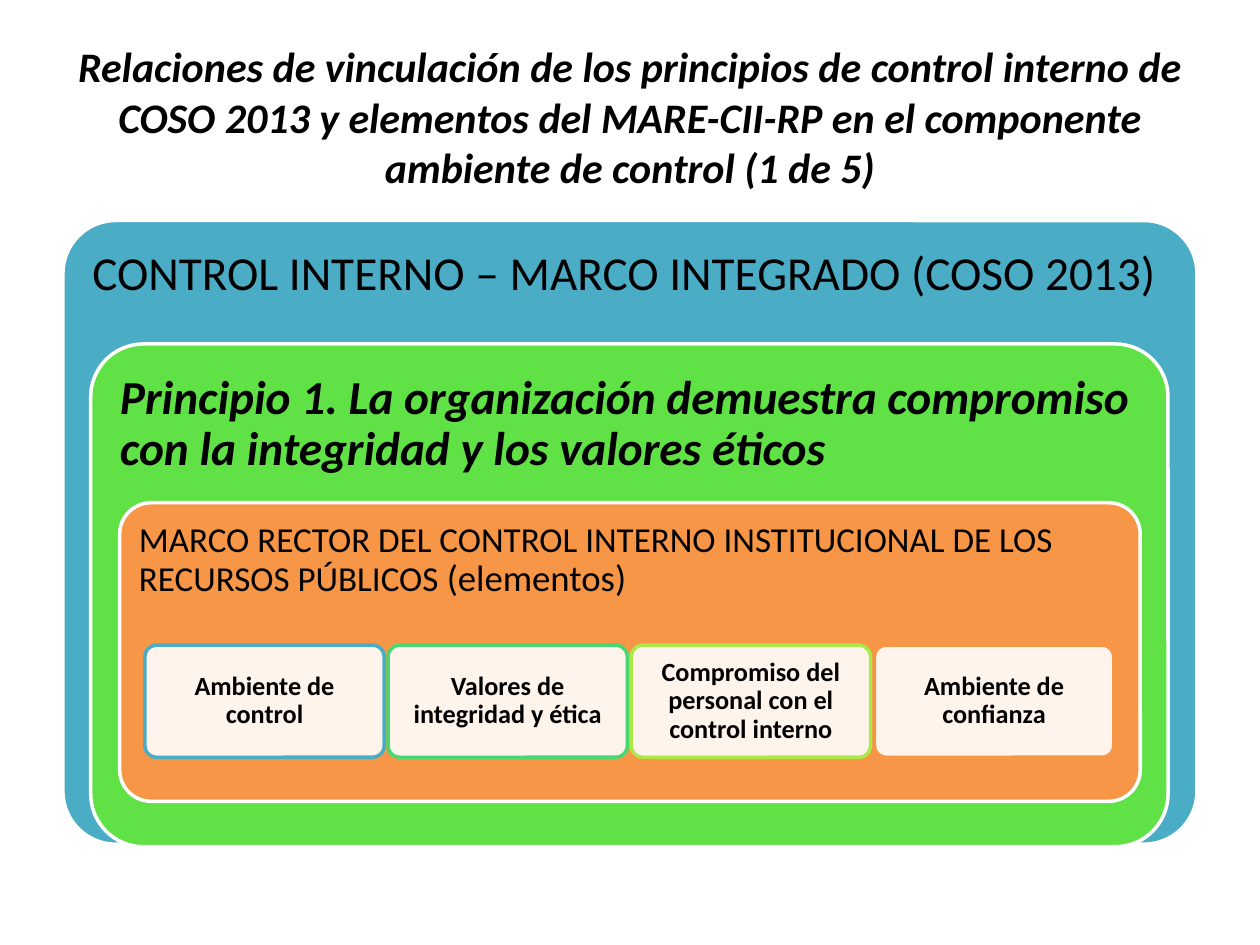
from lxml import etree
from pptx import Presentation
from pptx.dml.color import RGBColor
from pptx.enum.shapes import MSO_SHAPE
from pptx.enum.text import MSO_ANCHOR, PP_ALIGN
from pptx.oxml.ns import qn
from pptx.util import Inches, Pt

ROUNDED = MSO_SHAPE.ROUNDED_RECTANGLE
TOP, MIDDLE = MSO_ANCHOR.TOP, MSO_ANCHOR.MIDDLE
LEFT, CENTER = PP_ALIGN.LEFT, PP_ALIGN.CENTER
FONT = "Calibri"
COLORS = {
    "black": "000000", "white": "FFFFFF", "blue": "4BACC6", "green": "60E146",
    "orange": "F79646", "mint": "47D872", "lime": "ACE946",
}

TITLE = ("Relaciones de vinculación de los principios de control interno de "
         "COSO 2013 y elementos del MARE-CII-RP en el componente ambiente de control (1 de 5)")
FRAMEWORKS = [
    {"box": (0.5, 1.75, 9, 4.95), "corner": 0.085, "color": "blue", "inset": 0.11, "emphasis": False,
     "runs": [("CONTROL INTERNO – MARCO INTEGRADO (COSO 2013)", 27)]},
    {"box": (0.72, 2.73, 8.55, 3.99), "corner": 0.105, "color": "green", "inset": 0.11, "emphasis": True,
     "runs": [("Principio 1. La organización demuestra compromiso con la integridad y los valores éticos", 27)]},
    {"box": (0.95, 3.99, 8.1, 2.37), "corner": 0.105, "color": "orange", "inset": 0.08, "emphasis": False,
     "runs": [("MARCO RECTOR DEL CONTROL INTERNO INSTITUCIONAL DE LOS RECURSOS PÚBLICOS ", 20),
              ("(elementos)", 21)]},
]
ELEMENTS = [
    ("Ambiente de control", "blue"),
    ("Valores de integridad y ética", "mint"),
    ("Compromiso del personal con el control interno", "lime"),
    ("Ambiente de confianza", "orange"),
]
ELEMENT_LEFT, ELEMENT_TOP, ELEMENT_WIDTH, ELEMENT_HEIGHT, ELEMENT_GAP = 1.15, 5.12, 1.9, 0.89, 0.03


def rgb(name):
    return RGBColor.from_string(COLORS[name])


def write(frame, runs, align, anchor, inset, bold=False, italic=False, spacing=0.9):
    frame.word_wrap = True
    frame.vertical_anchor = anchor
    frame.margin_left = frame.margin_right = frame.margin_top = frame.margin_bottom = Inches(inset)
    paragraph = frame.paragraphs[0]
    paragraph.alignment = align
    paragraph.line_spacing = spacing
    for words, size in runs:
        run = paragraph.add_run()
        run.text = words
        run.font.name, run.font.size = FONT, Pt(size)
        run.font.bold, run.font.italic = bold, italic
        run.font.color.rgb = rgb("black")


def add_panel(slide, box, corner, fill, line):
    panel = slide.shapes.add_shape(ROUNDED, *map(Inches, box))
    panel.adjustments[0] = corner
    panel.shadow.inherit = False
    panel.fill.solid()
    panel.fill.fore_color.rgb = rgb(fill)
    panel.line.color.rgb = rgb(line)
    panel.line.width = Pt(2)
    return panel


def set_opacity(panel, percent):
    color = panel.element.spPr.find(qn("a:solidFill"))[0]
    etree.SubElement(color, qn("a:alpha")).set("val", str(percent * 1000))


def main():
    """Build the slide linking COSO 2013 principles to the MARE-CII-RP elements."""
    deck = Presentation()
    deck.slide_width, deck.slide_height = Inches(10), Inches(7.5)
    slide = deck.slides.add_slide(deck.slide_layouts[6])

    title = slide.shapes.add_textbox(Inches(0.5), Inches(0.3), Inches(9), Inches(1.25))
    write(title.text_frame, [(TITLE, 24)], CENTER, MIDDLE, 0.1, bold=True, italic=True, spacing=1.0)

    for framework in FRAMEWORKS:
        panel = add_panel(slide, framework["box"], framework["corner"], framework["color"], "white")
        write(panel.text_frame, framework["runs"], LEFT, TOP, framework["inset"],
              bold=framework["emphasis"], italic=framework["emphasis"])

    for index, (label, outline) in enumerate(ELEMENTS):
        left = ELEMENT_LEFT + index * (ELEMENT_WIDTH + ELEMENT_GAP)
        card = add_panel(slide, (left, ELEMENT_TOP, ELEMENT_WIDTH, ELEMENT_HEIGHT), 0.105, "white", outline)
        set_opacity(card, 90)
        write(card.text_frame, [(label, 15)], CENTER, MIDDLE, 0.06, bold=True)

    deck.save("out.pptx")


if __name__ == "__main__":
    main()
